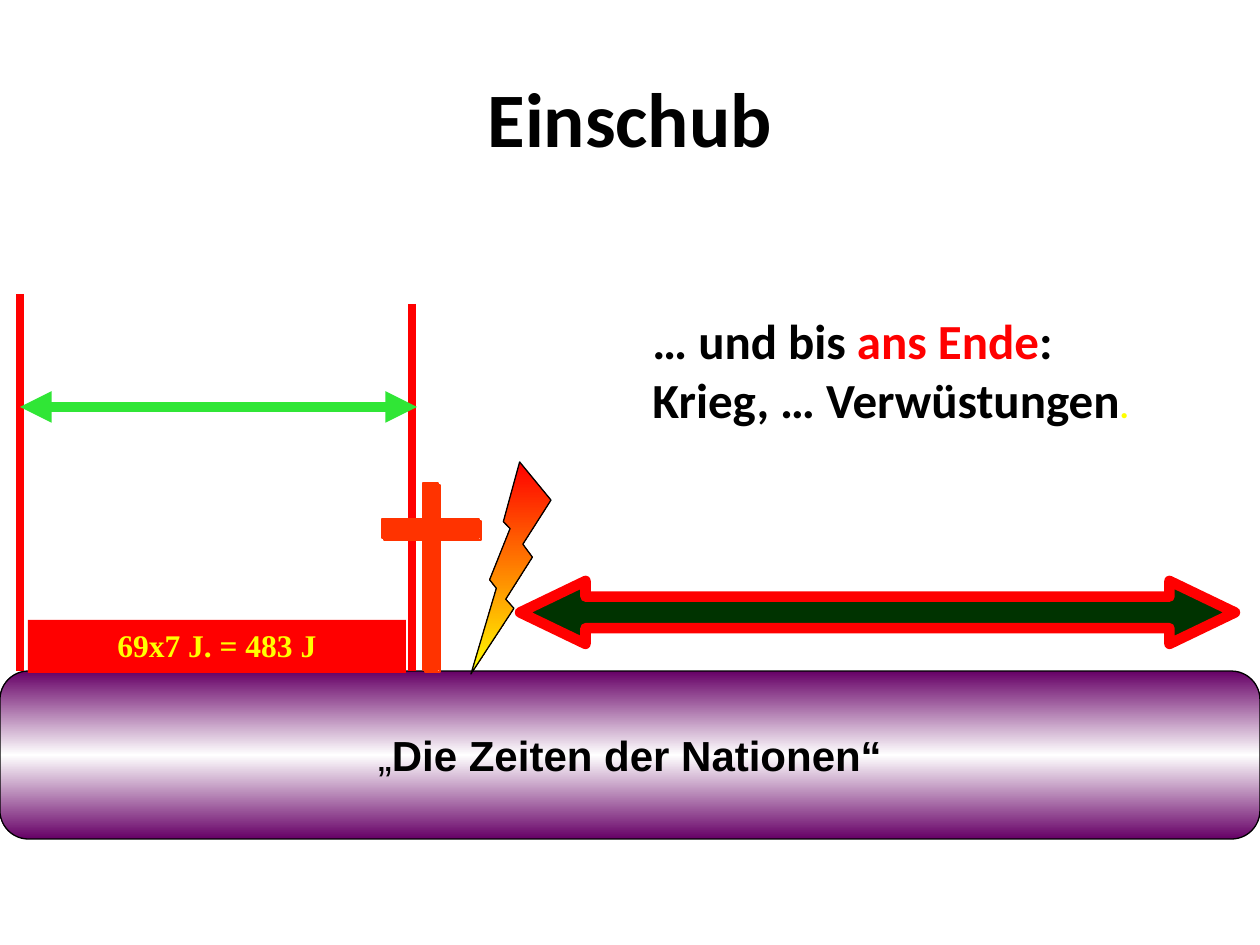
from copy import deepcopy
from dataclasses import dataclass

from lxml import etree
from pptx import Presentation
from pptx.dml.color import RGBColor
from pptx.enum.shapes import MSO_CONNECTOR, MSO_SHAPE
from pptx.enum.text import MSO_ANCHOR, MSO_AUTO_SIZE, PP_ALIGN
from pptx.oxml.ns import qn
from pptx.util import Pt

STRAIGHT = MSO_CONNECTOR.STRAIGHT
RECTANGLE = MSO_SHAPE.RECTANGLE
ROUNDED = MSO_SHAPE.ROUNDED_RECTANGLE
BOLT = MSO_SHAPE.LIGHTNING_BOLT
DOUBLE_ARROW = MSO_SHAPE.LEFT_RIGHT_ARROW
CENTER, LEFT = PP_ALIGN.CENTER, PP_ALIGN.LEFT
TOP, MIDDLE = MSO_ANCHOR.TOP, MSO_ANCHOR.MIDDLE
FIT_SHAPE = MSO_AUTO_SIZE.SHAPE_TO_FIT_TEXT
EMU_PER_PX = 914400 / 126


@dataclass(frozen=True)
class Theme:
    black: str = "000000"
    white: str = "FFFFFF"
    red: str = "FF0000"
    yellow: str = "FFFF00"
    purple: str = "660066"
    green: str = "30E636"
    dark_green: str = "003300"
    cross: str = "FF3300"
    heading_font: str = "Calibri"
    band_font: str = "Arial"
    label_font: str = "Times New Roman"
    title_size: int = 44
    quote_size: int = 28
    band_size: int = 24
    dot_size: int = 20
    label_size: int = 18
    thin: float = 0.75
    marker: float = 4.5
    thick: float = 6


THEME = Theme()


def px(*lengths):
    return [round(length * EMU_PER_PX) for length in lengths]


def rgb(color):
    return RGBColor.from_string(color)


def write(para, spans, font, align=LEFT):
    para.alignment = align
    for text, size, color, bold in spans:
        span = para.add_run()
        span.text = text
        span.font.name = font
        span.font.size = Pt(size)
        span.font.bold = bold
        span.font.color.rgb = rgb(color)


def add_shape(shapes, kind, box, fill=None, line=None, width=THEME.thin):
    shape = shapes.add_shape(kind, *px(*box))
    shape.shadow.inherit = False
    if fill:
        shape.fill.solid()
        shape.fill.fore_color.rgb = rgb(fill)
    if line:
        shape.line.color.rgb = rgb(line)
        shape.line.width = Pt(width)
    else:
        shape.line.fill.background()
    return shape


def fill_downwards(shape, colors):
    shape.fill.gradient()
    shape.fill.gradient_angle = 270
    stop_list = shape._element.spPr.find(".//" + qn("a:gsLst"))
    for _ in colors[2:]:
        stop_list.append(deepcopy(stop_list[0]))
    for index, (stop, color) in enumerate(zip(shape.fill.gradient_stops, colors)):
        stop.position = index / (len(colors) - 1)
        stop.color.rgb = rgb(color)


def add_line(shapes, start, end, color, width, arrows=False):
    line = shapes.add_connector(STRAIGHT, *px(*start, *end))
    line.line.color.rgb = rgb(color)
    line.line.width = Pt(width)
    if arrows:
        outline = line.line._get_or_add_ln()
        for tag in ("a:headEnd", "a:tailEnd"):
            etree.SubElement(outline, qn(tag), type="triangle")
    etree.SubElement(line._element.spPr, qn("a:effectLst"))


def add_title(page):
    title = page.shapes.title
    title.left, title.top, title.width, title.height = px(63, 38, 1134, 158)
    title.text_frame.vertical_anchor = MIDDLE
    write(title.text_frame.paragraphs[0],
          [("Einschub", THEME.title_size, THEME.black, True)],
          THEME.heading_font, CENTER)


def add_nations_band(page):
    band = add_shape(page.shapes, ROUNDED, (0, 671, 1260, 168), line=THEME.black)
    band.adjustments[0] = 0.17
    fill_downwards(band, [THEME.purple, THEME.white, THEME.purple])
    frame = band.text_frame
    frame.word_wrap = False
    frame.vertical_anchor = MIDDLE
    write(frame.paragraphs[0],
          [("„", THEME.band_size, THEME.black, False),
           ("Die Zeiten der Nationen“", THEME.band_size, THEME.black, True)],
          THEME.band_font, CENTER)


def add_weeks(page):
    shapes = page.shapes.add_group_shape().shapes
    for x, top in ((20, 294), (412, 304)):
        add_line(shapes, (x, top), (x, 671), THEME.red, THEME.marker)
    label = add_shape(shapes, RECTANGLE, (28, 620, 378, 53), THEME.red)
    label.text_frame.vertical_anchor = TOP
    write(label.text_frame.paragraphs[0],
          [("69x7 J. = 483 J", THEME.label_size, THEME.yellow, True)],
          THEME.label_font, CENTER)
    add_line(shapes, (20, 407), (417, 407), THEME.green, THEME.thick, arrows=True)


def add_cross(page):
    shapes = page.shapes.add_group_shape().shapes
    for offset, fill in ((2, THEME.white), (0, THEME.cross)):
        for x, y, width, height in ((423, 483, 15, 187), (382, 519, 97, 19)):
            add_shape(shapes, RECTANGLE, (x + offset, y + offset, width, height),
                      fill, THEME.cross)


def add_bolt(page):
    bolt = add_shape(page.shapes, BOLT, (471, 462, 80, 212), line=THEME.black)
    bolt._element.spPr.get_or_add_xfrm().set("flipH", "1")
    fill_downwards(bolt, [THEME.red, THEME.yellow])


def add_end_arrow(page):
    shapes = page.shapes.add_group_shape().shapes
    arrow = add_shape(shapes, DOUBLE_ARROW, (520, 581, 715, 63),
                      THEME.dark_green, THEME.red, THEME.thick)
    arrow.adjustments[0] = 0.5
    arrow.adjustments[1] = 1.04


def add_quote(page):
    frame = page.shapes.add_textbox(*px(640, 304, 508, 131)).text_frame
    frame.word_wrap = False
    frame.auto_size = FIT_SHAPE
    size = THEME.quote_size
    write(frame.paragraphs[0],
          [("… und bis ", size, THEME.black, True),
           ("ans Ende", size, THEME.red, True),
           (":", size, THEME.black, True)], THEME.heading_font)
    write(frame.add_paragraph(),
          [("Krieg, … Verwüstungen", size, THEME.black, True),
           (".", THEME.dot_size, THEME.yellow, True)], THEME.heading_font)


def main():
    deck = Presentation()
    deck.slide_width, deck.slide_height = px(1260, 945)
    page = deck.slides.add_slide(deck.slide_layouts.get_by_name("Title Only"))
    add_title(page)
    add_nations_band(page)
    add_weeks(page)
    add_cross(page)
    add_bolt(page)
    add_end_arrow(page)
    add_quote(page)
    deck.save("out.pptx")


if __name__ == "__main__":
    main()
